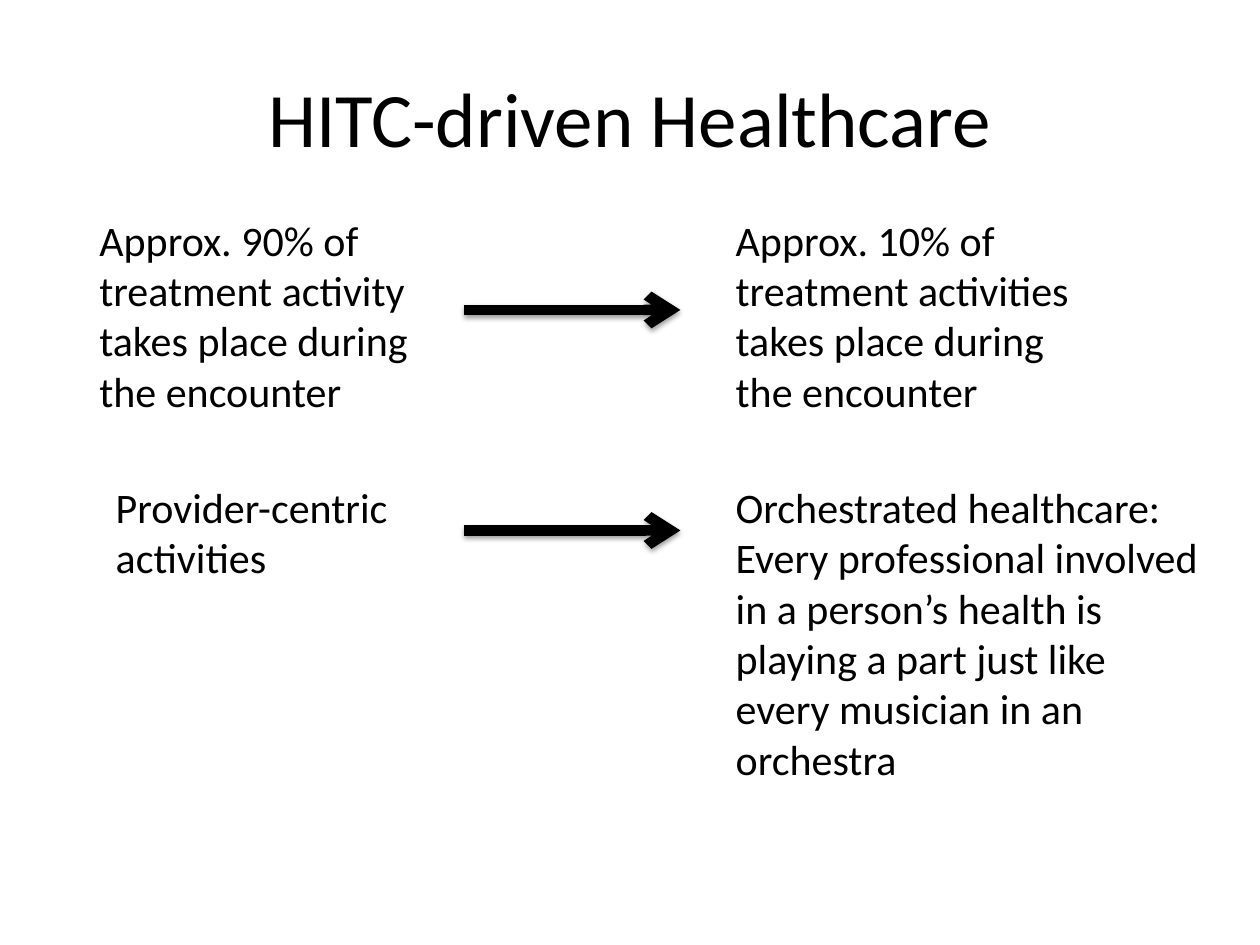
"""Build the slide comparing treatment activity before and after HITC-driven healthcare."""
from dataclasses import dataclass

import lxml.etree
import pptx
import pptx.dml.color
import pptx.enum.shapes
import pptx.enum.text
import pptx.oxml
import pptx.oxml.ns
import pptx.slide
import pptx.text.text
import pptx.util

Inches = pptx.util.Inches
Pt = pptx.util.Pt


@dataclass(frozen=True)
class Theme:
    """Colours, font and sizes in points."""

    ink: str = "000000"
    paper: str = "FFFFFF"
    font: str = "Calibri"
    title_size: int = 44
    body_size: int = 24
    arrow_width: int = 6


@dataclass(frozen=True)
class Statement:
    """A text block with its place in inches."""

    left: float
    top: float
    width: float
    height: float
    lines: tuple[str, ...]
    wrap: bool = True


THEME = Theme()
ARROW_START, ARROW_END = 3.68, 5.4
ARROW_ROWS = (2.46, 4.21)
TOP_ROW, BOTTOM_ROW = 1.65, 3.77
RIGHT_COLUMN = 5.74

STATEMENTS = (
    Statement(0.69, TOP_ROW, 2.99, 1.72,
              ("Approx. 90% of treatment activity takes place during the encounter",)),
    Statement(RIGHT_COLUMN, TOP_ROW, 2.99, 1.72,
              ("Approx. 10% of treatment activities takes place during the encounter",)),
    Statement(0.82, BOTTOM_ROW, 2.38, 1.31, ("Provider-centric", "activities"), wrap=False),
    Statement(RIGHT_COLUMN, BOTTOM_ROW, 3.92, 2.52,
              ("Orchestrated healthcare: Every professional involved in a person’s health is "
               "playing a part just like every musician in an orchestra",)),
)


def ink() -> pptx.dml.color.RGBColor:
    """Return the colour of text and lines."""
    return pptx.dml.color.RGBColor.from_string(THEME.ink)


def add_span(para: pptx.text.text._Paragraph, text: str, size: int) -> None:
    """Add one formatted run to a paragraph."""
    span = para.add_run()
    span.text = text
    span.font.name = THEME.font
    span.font.size = Pt(size)
    span.font.color.rgb = ink()


def add_title(page: pptx.slide.Slide, text: str) -> None:
    """Place and fill the title placeholder."""
    box = page.shapes.title
    box.left, box.top, box.width, box.height = map(Inches, (0.5, 0.3, 9, 1.25))
    box.text_frame.vertical_anchor = pptx.enum.text.MSO_ANCHOR.MIDDLE
    para = box.text_frame.paragraphs[0]
    para.alignment = pptx.enum.text.PP_ALIGN.CENTER
    add_span(para, text, THEME.title_size)


def add_statement(page: pptx.slide.Slide, item: Statement) -> None:
    """Draw one text block, a paragraph for each line."""
    box = page.shapes.add_textbox(*map(Inches, (item.left, item.top, item.width, item.height)))
    frame = box.text_frame
    frame.word_wrap = item.wrap
    frame.auto_size = pptx.enum.text.MSO_AUTO_SIZE.SHAPE_TO_FIT_TEXT
    for index, line in enumerate(item.lines):
        para = frame.add_paragraph() if index else frame.paragraphs[0]
        add_span(para, line, THEME.body_size)


def add_arrow(page: pptx.slide.Slide, height: float) -> None:
    """Draw a shadowed arrow between the two columns."""
    arrow = page.shapes.add_connector(
        pptx.enum.shapes.MSO_CONNECTOR.STRAIGHT,
        Inches(ARROW_START), Inches(height), Inches(ARROW_END), Inches(height))
    arrow.line.color.rgb = ink()
    arrow.line.width = Pt(THEME.arrow_width)
    qn = pptx.oxml.ns.qn
    properties = arrow.line._get_or_add_ln().getparent()
    lxml.etree.SubElement(properties.find(qn("a:ln")), qn("a:tailEnd"), type="arrow")
    effects = lxml.etree.SubElement(properties, qn("a:effectLst"))
    shadow = lxml.etree.SubElement(
        effects, qn("a:outerShdw"), blurRad=str(Pt(3.1)), dist=str(Pt(1.6)),
        dir="5400000", rotWithShape="0")
    colour = lxml.etree.SubElement(shadow, qn("a:srgbClr"), val=THEME.ink)
    lxml.etree.SubElement(colour, qn("a:alpha"), val="38000")


def main() -> None:
    """Build and save the deck."""
    deck = pptx.Presentation()
    deck.slide_width, deck.slide_height = Inches(10), Inches(7.5)
    page = deck.slides.add_slide(deck.slide_layouts.get_by_name("Title Only"))
    page.background.fill.solid()
    page.background.fill.fore_color.rgb = pptx.dml.color.RGBColor.from_string(THEME.paper)
    add_title(page, "HITC-driven Healthcare")
    for item in STATEMENTS:
        add_statement(page, item)
    for height in ARROW_ROWS:
        add_arrow(page, height)
    deck.save("out.pptx")


if __name__ == "__main__":
    main()
